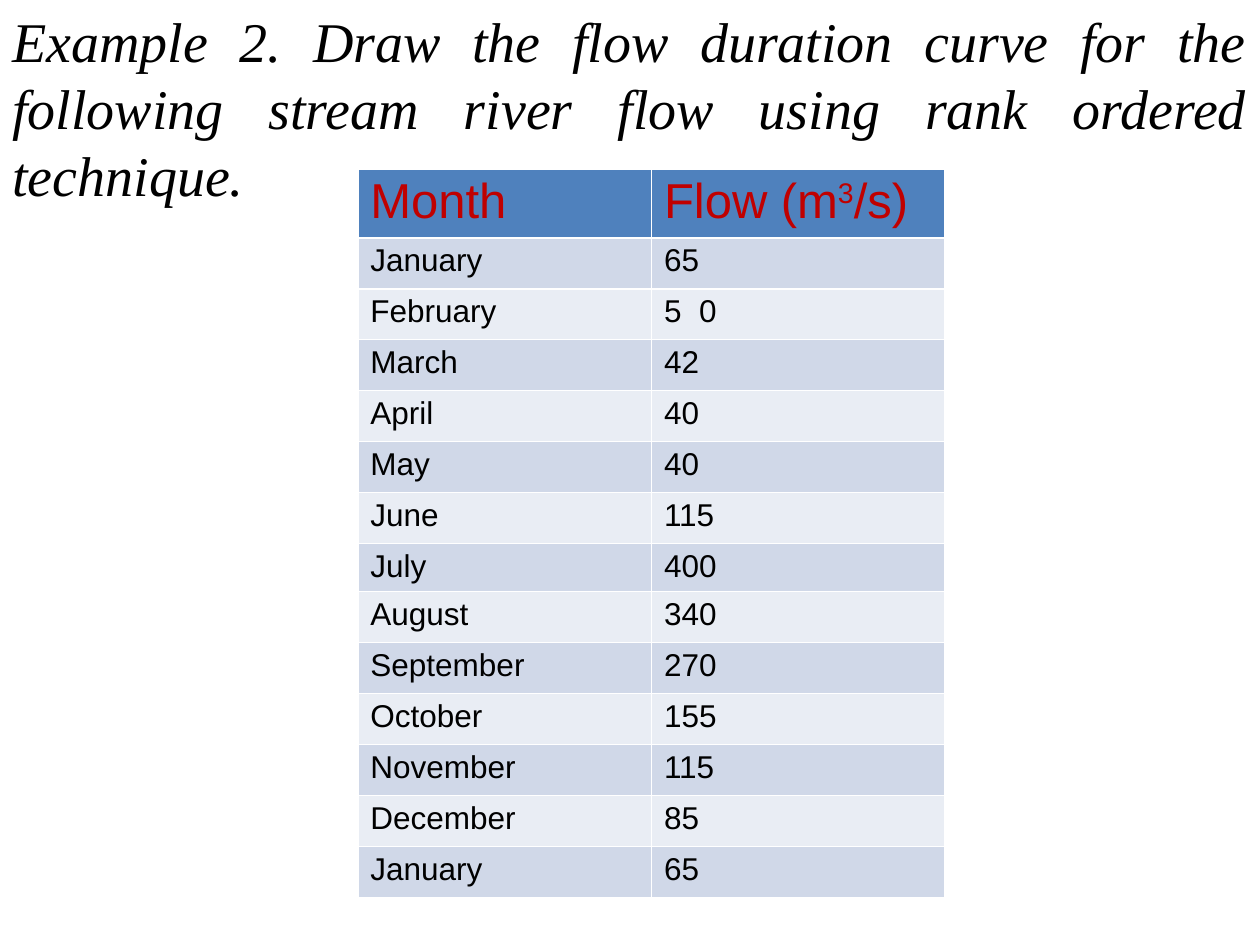
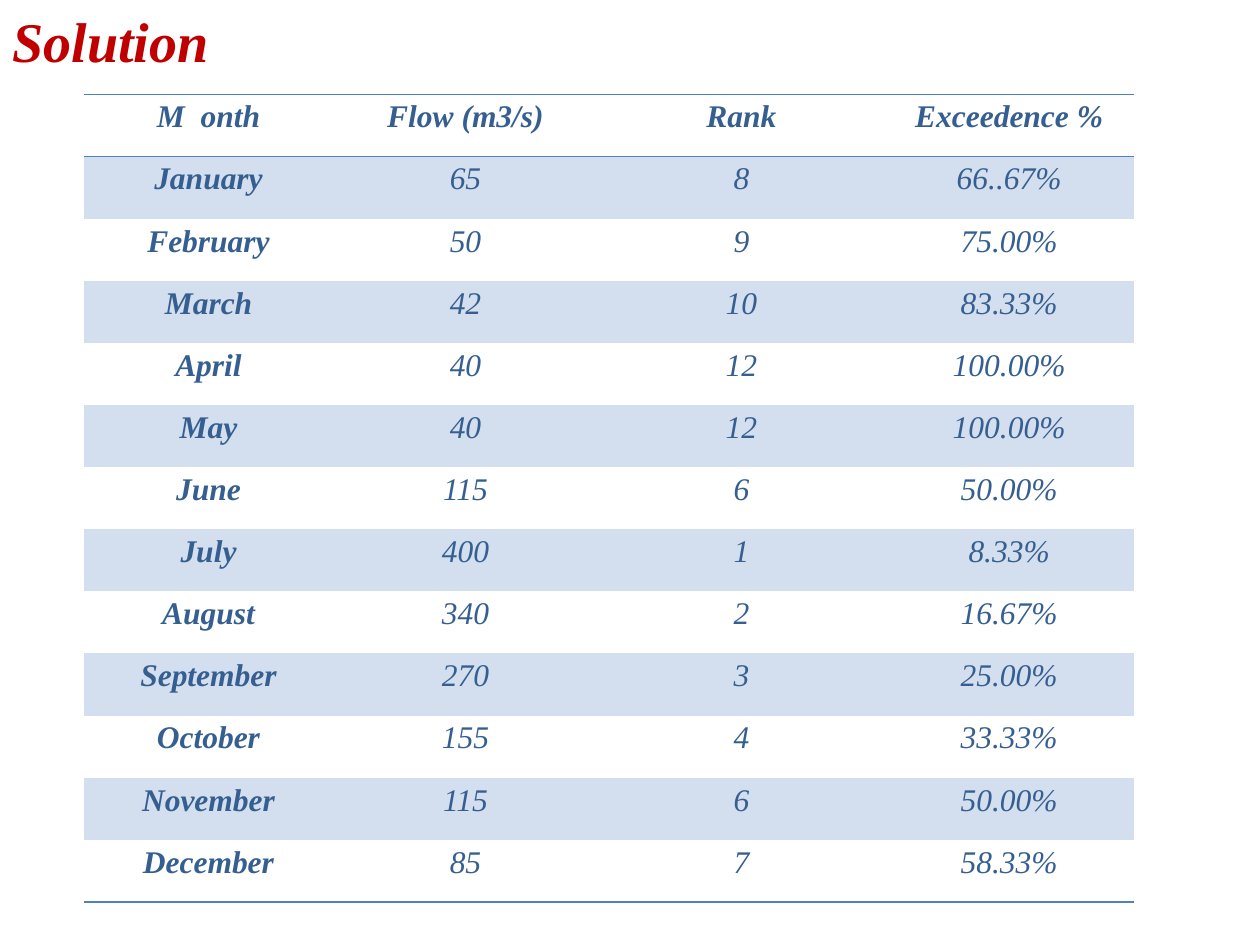
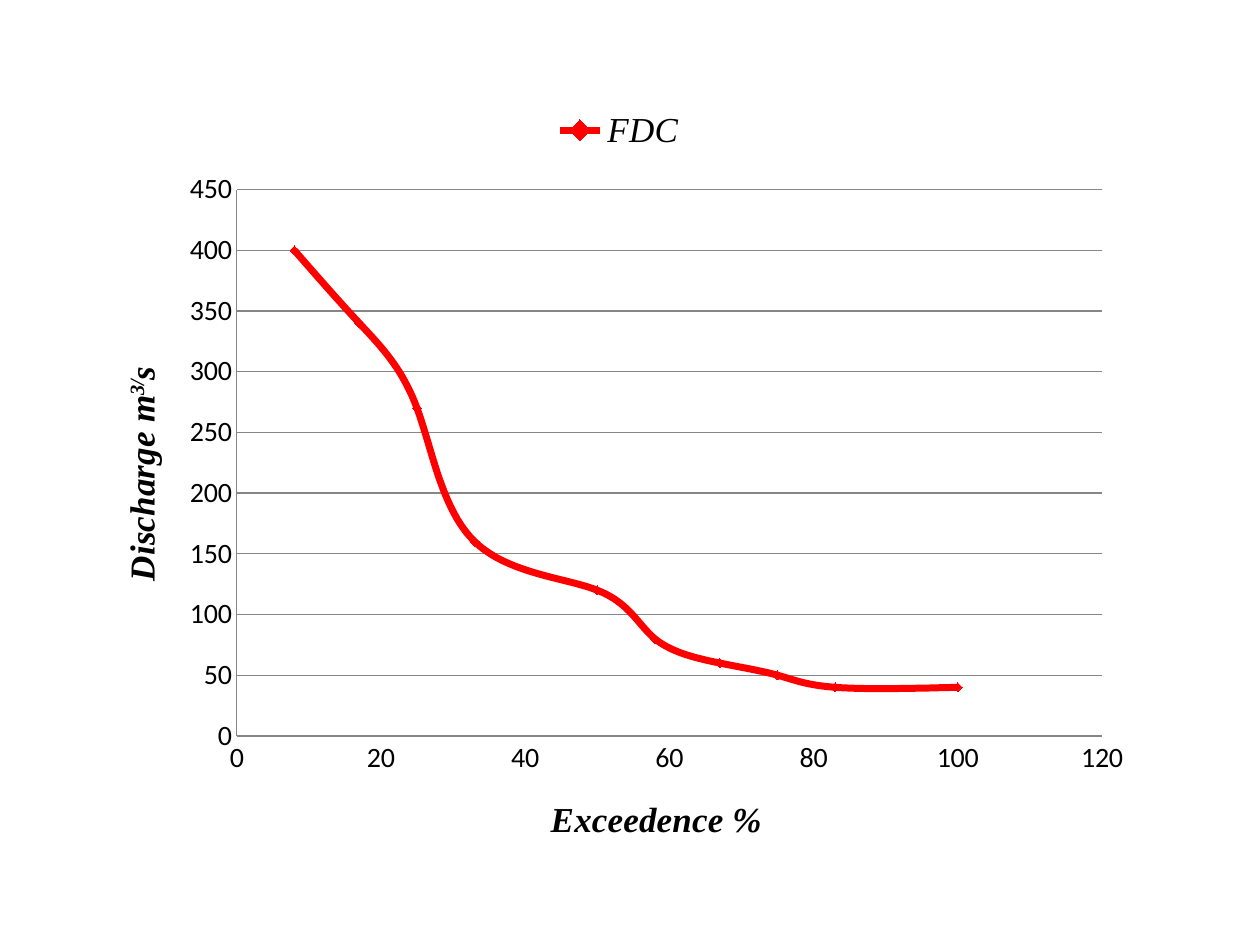
"""Build three slides on a flow duration curve: data, ranking and chart."""
import dataclasses

import pptx
import pptx.chart.data
import pptx.dml.color
import pptx.enum.chart
import pptx.enum.text
import pptx.oxml
import pptx.oxml.ns
import pptx.util

Inches = pptx.util.Inches
Pt = pptx.util.Pt
ALIGN = pptx.enum.text.PP_ALIGN


@dataclasses.dataclass(frozen=True)
class Theme:
    serif: str = "Times New Roman"
    sans: str = "Arial"
    plain: str = "Calibri"
    black: str = "000000"
    white: str = "FFFFFF"
    red: str = "C00000"
    blue: str = "4F81BD"
    navy: str = "365F91"
    dark: str = "D0D8E8"
    light: str = "E9EDF4"
    band: str = "D3DFEE"
    curve: str = "FF0000"
    grid: str = "868686"
    title: int = 32
    head: int = 28
    label: int = 20
    body: int = 18
    tick: int = 16


T = Theme()

TASK = ("Example 2. Draw the flow duration curve for the following stream river "
        "flow using rank ordered technique.")
FLOWS = [
    ("Month", "Flow (m^3^/s)"),
    ("January", "65"), ("February", "5  0"), ("March", "42"), ("April", "40"),
    ("May", "40"), ("June", "115"), ("July", "400"), ("August", "340"),
    ("September", "270"), ("October", "155"), ("November", "115"),
    ("December", "85"), ("January", "65"),
]
RANKS = [
    ("M  onth", "Flow (m3/s)", "Rank", "Exceedence %"),
    ("January", "65", "8", "66..67%"),
    ("February", "50", "9", "75.00%"),
    ("March", "42", "10", "83.33%"),
    ("April", "40", "12", "100.00%"),
    ("May", "40", "12", "100.00%"),
    ("June", "115", "6", "50.00%"),
    ("July", "400", "1", "8.33%"),
    ("August", "340", "2", "16.67%"),
    ("September", "270", "3", "25.00%"),
    ("October", "155", "4", "33.33%"),
    ("November", "115", "6", "50.00%"),
    ("December", "85", "7", "58.33%"),
]
CURVE = [
    (100, 40), (100, 40), (83, 40), (75, 50), (67, 60), (58, 80),
    (50, 120), (50, 120), (33, 160), (25, 270), (17, 340), (8, 400),
]


def rgb(code):
    return pptx.dml.color.RGBColor.from_string(code)


def style(font, size, face, color=T.black, bold=False, italic=False):
    font.size = Pt(size)
    font.name = face
    font.color.rgb = rgb(color)
    font.bold = bold
    font.italic = italic


def write(par, text, align=None, space=None, **form):
    """Add text to a paragraph; parts between carets are raised."""
    par.alignment = align
    par.line_spacing = space
    for num, part in enumerate(text.split("^")):
        run = par.add_run()
        run.text = part
        style(run.font, **form)
        if num % 2:
            run.font._element.set("baseline", "30000")


def heading(slide, text, **form):
    box = slide.shapes.add_textbox(0, 0, Inches(10), Inches(7.5))
    box.text_frame.word_wrap = True
    write(box.text_frame.paragraphs[0], text, size=T.title, face=T.serif,
          italic=True, **form)


def edge(cell, **lines):
    props = cell._tc.get_or_add_tcPr()
    for num, side in enumerate("LRTB"):
        color = lines.get(side)
        line = pptx.oxml.parse_xml(
            f'<a:ln{side} {pptx.oxml.ns.nsdecls("a")} w="{Pt(1) if color else 0}">'
            + (f'<a:solidFill><a:srgbClr val="{color}"/></a:solidFill>'
               if color else "<a:noFill/>") + f"</a:ln{side}>")
        props.insert(num, line)


def grid(slide, rows, left, top, widths, heights, paint):
    frame = slide.shapes.add_table(
        len(rows), len(widths), Inches(left), Inches(top),
        Inches(sum(widths)), Inches(sum(heights)))
    table = frame.table
    table.first_row = table.horz_banding = False
    for col, width in zip(table.columns, widths):
        col.width = Inches(width)
    for row, height in zip(table.rows, heights):
        row.height = Inches(height)
    for r, row in enumerate(rows):
        for c, text in enumerate(row):
            paint(table.cell(r, c), text, r, c)


def tint(cell, color):
    if color:
        cell.fill.solid()
        cell.fill.fore_color.rgb = rgb(color)
    else:
        cell.fill.background()


def flow_cell(cell, text, r, c):
    head = r == 0
    tint(cell, T.blue if head else (T.light, T.dark)[r % 2])
    edge(cell, **dict.fromkeys("LRTB", T.white))
    cell.margin_top = cell.margin_bottom = Inches(0.04)
    write(cell.text_frame.paragraphs[0], text, face=T.sans,
          size=T.head if head else T.body, color=T.red if head else T.black)


def rank_cell(cell, text, r, c):
    last = len(RANKS) - 1
    tint(cell, T.band if r % 2 else None)
    edge(cell, T=T.blue if r < 2 else None, B=T.blue if r in (0, last) else None)
    cell.margin_left = cell.margin_right = Inches(0.07)
    cell.margin_top = cell.margin_bottom = 0
    write(cell.text_frame.paragraphs[0], text, align=ALIGN.CENTER, space=1.15,
          face=T.serif, size=T.body, color=T.navy, italic=True,
          bold=r == 0 or c == 0)


def set_axis(axis, title, top, step, turn=0):
    axis.minimum_scale, axis.maximum_scale, axis.major_unit = 0, top, step
    axis.major_tick_mark = axis.minor_tick_mark = pptx.enum.chart.XL_TICK_MARK.NONE
    style(axis.tick_labels.font, T.tick, T.plain)
    axis.format.line.color.rgb = rgb(T.grid)
    frame = axis.axis_title.text_frame
    frame._txBody.bodyPr.set("rot", str(turn))
    write(frame.paragraphs[0], title, size=T.label, face=T.serif,
          bold=True, italic=True)


def draw_curve(slide):
    data = pptx.chart.data.XyChartData()
    points = data.add_series("FDC")
    for x, y in CURVE:
        points.add_data_point(x, y)
    chart = slide.shapes.add_chart(
        pptx.enum.chart.XL_CHART_TYPE.XY_SCATTER_SMOOTH, Inches(0.75),
        Inches(0.75), Inches(8.33), Inches(6.17), data).chart
    style(chart.font, 10, T.plain)
    chart.has_title = False
    chart.has_legend = True
    chart.legend.position = pptx.enum.chart.XL_LEGEND_POSITION.TOP
    chart.legend.include_in_layout = False
    style(chart.legend.font, T.label, T.serif, italic=True)
    set_axis(chart.category_axis, "Exceedence %", 120, 20)
    set_axis(chart.value_axis, "Discharge m^3/^s", 450, 50, turn=-5400000)
    chart.category_axis.has_major_gridlines = False
    chart.value_axis.major_gridlines.format.line.color.rgb = rgb(T.grid)
    plot = chart.plots[0]
    plot.vary_by_categories = False
    line = plot.series[0]
    line._element.get_or_add_smooth().val = True
    line.format.line.color.rgb = rgb(T.curve)
    line.format.line.width = Pt(4)
    mark = line.marker
    mark.style = pptx.enum.chart.XL_MARKER_STYLE.DIAMOND
    mark.size = 5
    mark.format.fill.solid()
    mark.format.fill.fore_color.rgb = rgb(T.curve)
    mark.format.line.color.rgb = rgb(T.curve)


def main():
    deck = pptx.Presentation()
    deck.slide_width, deck.slide_height = Inches(10), Inches(7.5)
    task, answer, graph = [
        deck.slides.add_slide(deck.slide_layouts[6]) for _ in range(3)]

    heading(task, TASK, align=ALIGN.JUSTIFY)
    tall, short = 0.53, 0.38
    step = (5.77 - tall - short) / (len(FLOWS) - 2)
    heights = [tall] + [short if row[0] == "July" else step for row in FLOWS[1:]]
    grid(task, FLOWS, 2.84, 1.34, [2.33] * 2, heights, flow_cell)

    heading(answer, "Solution", color=T.red, bold=True)
    grid(answer, RANKS, 0.67, 0.75, [1.97, 2.11, 2.27, 1.98],
         [6.41 / len(RANKS)] * len(RANKS), rank_cell)

    draw_curve(graph)
    deck.save("out.pptx")


if __name__ == "__main__":
    main()
